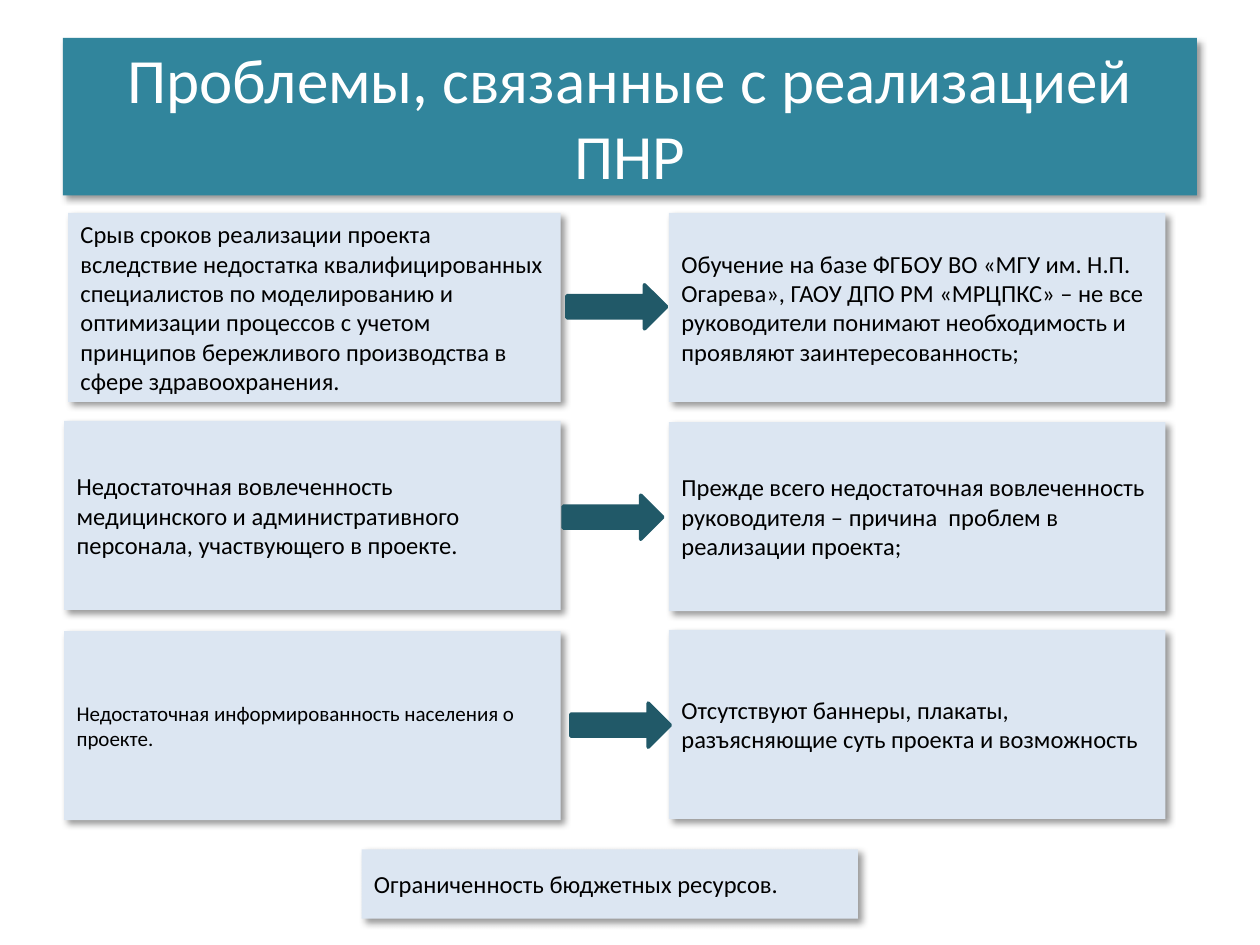
"""Build a slide pairing project problems with their causes and responses."""
import lxml.etree
import pptx
import pptx.dml.color
import pptx.enum.shapes
import pptx.enum.text
import pptx.oxml.ns
import pptx.util

Inches = pptx.util.Inches
SHAPE = pptx.enum.shapes.MSO_SHAPE
ALIGN = pptx.enum.text.PP_ALIGN

COLORS = {"title": "31859C", "card": "DCE6F2", "arrow": "215968",
          "light": "FFFFFF", "dark": "000000"}
TITLE = "Проблемы, связанные с реализацией ПНР"
FOOTER = "Ограниченность бюджетных ресурсов."
ROWS = [
    {"problem": "Срыв сроков реализации проекта вследствие недостатка "
                "квалифицированных специалистов по моделированию и оптимизации "
                "процессов с учетом принципов бережливого производства в сфере "
                "здравоохранения.",
     "answer": "Обучение на базе ФГБОУ ВО «МГУ им. Н.П. Огарева», ГАОУ ДПО РМ "
               "«МРЦПКС» – не все руководители понимают необходимость и "
               "проявляют заинтересованность;",
     "left": 0.54, "tops": (1.69, 1.69), "size": 14, "arrow": (4.5, 2.26)},
    {"problem": "Недостаточная вовлеченность медицинского и административного "
                "персонала, участвующего в проекте.",
     "answer": "Прежде всего недостаточная вовлеченность  руководителя – "
               "причина  проблем в реализации проекта;",
     "left": 0.51, "tops": (3.34, 3.35), "size": 14, "arrow": (4.47, 3.93)},
    {"problem": "Недостаточная информированность населения о проекте.",
     "answer": "Отсутствуют баннеры, плакаты, разъясняющие суть проекта и "
               "возможность",
     "left": 0.51, "tops": (5.01, 5), "size": 12, "arrow": (4.53, 5.58)},
]
CARD_WIDTH, CARD_HEIGHT = 3.94, 1.5
LEFT_EDGE, ANSWER_LEFT = 4.45, 5.31
ARROW_WIDTH, ARROW_HEIGHT = 0.79, 0.35


def rgb(name):
    return pptx.dml.color.RGBColor.from_string(COLORS[name])


def add_filled(page, preset, place, fill):
    shape = page.shapes.add_shape(preset, *map(Inches, place))
    shape.shadow.inherit = False
    shape.fill.solid()
    shape.fill.fore_color.rgb = rgb(fill)
    shape.line.fill.background()
    return shape


def add_shadow(shape):
    qn = pptx.oxml.ns.qn
    effects = shape._element.spPr.find(qn("a:effectLst"))
    shadow = lxml.etree.SubElement(
        effects, qn("a:outerShdw"), blurRad=str(pptx.util.Pt(4)),
        dist=str(pptx.util.Pt(3)), dir=str(45 * 60000), algn="tl", rotWithShape="0")
    color = lxml.etree.SubElement(shadow, qn("a:srgbClr"), val=COLORS["dark"])
    lxml.etree.SubElement(color, qn("a:alpha"), val="40000")


def add_card(page, text, place, size=14, fill="card", ink="dark", align=ALIGN.LEFT):
    box = add_filled(page, SHAPE.RECTANGLE, place, fill)
    add_shadow(box)
    frame = box.text_frame
    frame.word_wrap = True
    frame.vertical_anchor = pptx.enum.text.MSO_ANCHOR.MIDDLE
    para = frame.paragraphs[0]
    para.alignment = align
    span = para.add_run()
    span.text = text
    for key, value in {"name": "Calibri", "size": pptx.util.Pt(size)}.items():
        setattr(span.font, key, value)
    span.font.color.rgb = rgb(ink)


def add_arrow(page, left, top):
    arrow = add_filled(page, SHAPE.RIGHT_ARROW,
                       (left, top, ARROW_WIDTH, ARROW_HEIGHT), "arrow")
    arrow.line.color.rgb = rgb("arrow")
    arrow.line.width = pptx.util.Pt(2)


def main():
    deck = pptx.Presentation()
    deck.slide_width, deck.slide_height = Inches(10), Inches(7.5)
    page = deck.slides.add_slide(deck.slide_layouts[6])
    add_card(page, TITLE, (0.5, 0.3, 9, 1.25), 36, "title", "light", ALIGN.CENTER)
    add_card(page, FOOTER, (2.87, 6.74, CARD_WIDTH, 0.55))
    for row in ROWS:
        problem_top, answer_top = row["tops"]
        width = LEFT_EDGE - row["left"]
        add_card(page, row["problem"],
                 (row["left"], problem_top, width, CARD_HEIGHT), row["size"])
        add_card(page, row["answer"],
                 (ANSWER_LEFT, answer_top, CARD_WIDTH, CARD_HEIGHT))
    for row in ROWS:
        add_arrow(page, *row["arrow"])
    deck.save("out.pptx")


if __name__ == "__main__":
    main()
